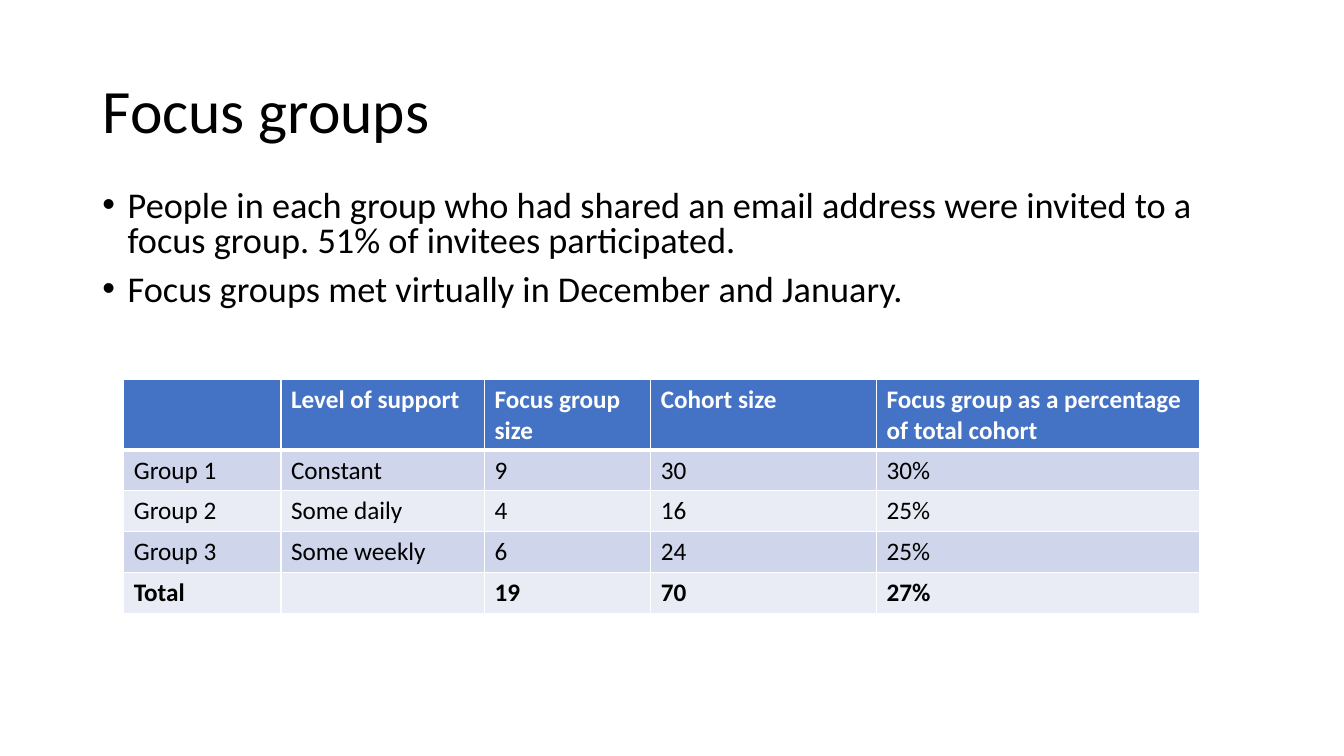
from dataclasses import dataclass

from lxml import etree
from pptx import Presentation
from pptx.dml.color import RGBColor
from pptx.enum import text as t
from pptx.oxml import ns
from pptx.util import Cm, Pt

BLACK = RGBColor(0x00, 0x00, 0x00)
WHITE = RGBColor(0xFF, 0xFF, 0xFF)
BLUE = RGBColor(0x44, 0x72, 0xC4)
BANDS = (RGBColor(0xCF, 0xD5, 0xEA), RGBColor(0xE9, 0xEB, 0xF5))
FACE = "Calibri"

POINTS = (
    "People in each group who had shared an email address were invited "
    "to a focus group. 51% of invitees participated.",
    "Focus groups met virtually in December and January.",
)
WIDTHS = (3.96, 5.13, 4.19, 5.69, 8.15)
HEAD_HIGH, ROW_HIGH = 1.78, 1.03


@dataclass
class Row:
    cells: tuple[str, ...]
    fill: RGBColor
    color: RGBColor = BLACK
    bold: bool = False
    high: float = ROW_HIGH
    top: float = 1
    base: float = 1


ROWS = (
    Row(("", "Level of support", "Focus group size", "Cohort size",
         "Focus group as a percentage of total cohort"),
        BLUE, WHITE, True, HEAD_HIGH, base=3),
    Row(("Group 1", "Constant", "9", "30", "30%"), BANDS[0], top=3),
    Row(("Group 2", "Some daily", "4", "16", "25%"), BANDS[1]),
    Row(("Group 3", "Some weekly", "6", "24", "25%"), BANDS[0]),
    Row(("Total", "", "19", "70", "27%"), BANDS[1], bold=True),
)


def style(item, size: float, color: RGBColor, bold: bool = False) -> None:
    """Format the font of a run or a paragraph."""
    look = {"name": FACE, "size": Pt(size), "bold": bold}
    for key, val in look.items():
        setattr(item.font, key, val)
    item.font.color.rgb = color


def place(shape, left: float, top: float, width: float, high: float) -> None:
    box = {"left": left, "top": top, "width": width, "height": high}
    for key, val in box.items():
        setattr(shape, key, Cm(val))


def add_bullet(para) -> None:
    props = para._p.get_or_add_pPr()
    props.set("marL", str(Cm(0.64)))
    props.set("indent", str(-Cm(0.64)))
    etree.SubElement(props, ns.qn("a:buFont")).set("typeface", "Arial")
    etree.SubElement(props, ns.qn("a:buChar")).set("char", "•")


def add_edges(cell, row: Row) -> None:
    """Draw white borders, which must come before the cell's fill."""
    props = cell._tc.get_or_add_tcPr()
    edges = {"lnL": 1, "lnR": 1, "lnT": row.top, "lnB": row.base}
    for spot, (tag, wide) in enumerate(edges.items()):
        line = etree.Element(ns.qn(f"a:{tag}"), w=str(Pt(wide)))
        fill = etree.SubElement(line, ns.qn("a:solidFill"))
        etree.SubElement(fill, ns.qn("a:srgbClr")).set("val", str(WHITE))
        props.insert(spot, line)


def add_title(slide) -> None:
    title = slide.shapes.title
    place(title, 2.33, 1.01, 29.21, 3.68)
    frame = title.text_frame
    frame.text = "Focus groups"
    frame.vertical_anchor = t.MSO_ANCHOR.MIDDLE
    para = frame.paragraphs[0]
    para.alignment = t.PP_ALIGN.LEFT
    para.line_spacing = 0.9
    style(para.runs[0], 44, BLACK)


def add_points(slide) -> None:
    box = slide.shapes.add_textbox(Cm(2.33), Cm(4.69), Cm(29.21), Cm(3.4))
    frame = box.text_frame
    frame.word_wrap = True
    frame.text = "\n".join(POINTS)
    for para in frame.paragraphs:
        para.line_spacing = 0.8
        para.space_before = Pt(10)
        add_bullet(para)
        style(para.runs[0], 25.9, BLACK)


def add_grid(slide) -> None:
    high = sum(row.high for row in ROWS)
    grid = slide.shapes.add_table(
        len(ROWS), len(WIDTHS), Cm(3.12), Cm(9.56), Cm(sum(WIDTHS)), Cm(high)
    ).table
    for col, width in zip(grid.columns, WIDTHS):
        col.width = Cm(width)
    for line, row in zip(grid.rows, ROWS):
        line.height = Cm(row.high)
        for cell, words in zip(line.cells, row.cells):
            cell.text = words
            cell.fill.solid()
            cell.fill.fore_color.rgb = row.fill
            add_edges(cell, row)
            for run in cell.text_frame.paragraphs[0].runs:
                style(run, 18, row.color, row.bold)


def main() -> None:
    deck = Presentation()
    deck.slide_width, deck.slide_height = Cm(33.87), Cm(19.05)
    slide = deck.slides.add_slide(deck.slide_layouts[5])
    add_title(slide)
    add_points(slide)
    add_grid(slide)
    deck.save("out.pptx")


if __name__ == "__main__":
    main()
